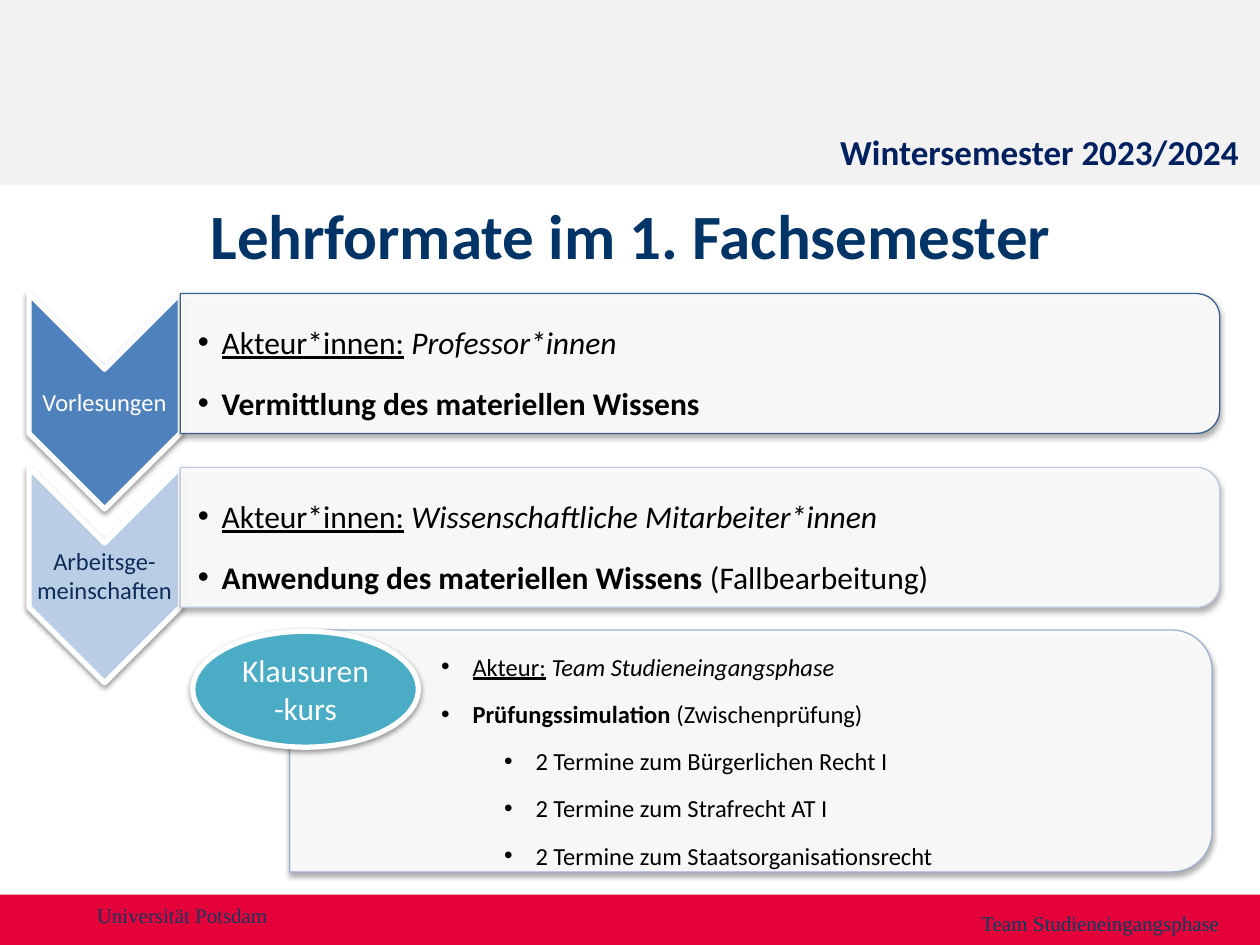
import pptx
import pptx.util
import pptx.dml.color
import pptx.enum.shapes
import pptx.enum.text
import pptx.oxml.ns
from lxml import etree

Inches, Pt = pptx.util.Inches, pptx.util.Pt
SHAPE = pptx.enum.shapes.MSO_SHAPE
ALIGN = pptx.enum.text.PP_ALIGN
ANCHOR = pptx.enum.text.MSO_ANCHOR
qn = pptx.oxml.ns.qn

COLORS = {
    "white": "FFFFFF", "black": "000000", "header": "F2F2F2", "footer": "E4013A",
    "title": "003366", "semester": "002060", "university": "17375E", "team": "014260",
    "lecture": "4F81BD", "lecture_edge": "3A5F8C",
    "group": "B9CDE5", "group_edge": "BECADF", "group_text": "0D2C5A",
    "exam": "4BACC6", "exam_edge": "9DB0D1",
}
SLIDE_W, SLIDE_H = 10, 7.5
ROW_TOP, ROW_STEP, ROW_H = 2.33, 1.38, 1.11
CHEVRON_LEFT, CHEVRON_W, CHEVRON_H = 0.23, 1.2, 1.71
PANEL_LEFT, PANEL_W = CHEVRON_LEFT + CHEVRON_W, 8.25

FORMATS = [
    {"label": "Vorlesungen", "fill": "lecture", "edge": "lecture_edge", "text": "white",
     "points": [
         (1, [("Akteur*innen:", "u"), (" Professor*innen", "i")]),
         (1, [("Vermittlung des materiellen Wissens", "b")]),
     ]},
    {"label": "Arbeitsge-meinschaften", "fill": "group", "edge": "group_edge", "text": "group_text",
     "points": [
         (1, [("Akteur*innen:", "u"), (" ", ""), ("Wissenschaftliche Mitarbeiter*innen", "i")]),
         (1, [("Anwendung des materiellen Wissens", "b"), (" (Fallbearbeitung)", "")]),
     ]},
]
EXAM_COURSE = "Klausuren-kurs"
EXAM_POINTS = [
    (3, [("Akteur:", "u"), (" ", ""), ("Team Studieneingangsphase", "i")]),
    (3, [("Prüfungssimulation ", "b"), ("(Zwischenprüfung)", "")]),
    (4, [("2 Termine zum Bürgerlichen Recht I", "")]),
    (4, [("2 Termine zum Strafrecht AT I", "")]),
    (4, [("2 Termine zum Staatsorganisationsrecht", "")]),
]
INDENTS = {1: (0.19, 0.19), 3: (1.25, 0.25), 4: (1.75, 0.25)}


def rgb(name):
    return pptx.dml.color.RGBColor.from_string(COLORS[name])


def add_shape(slide, kind, box, fill, edge=None, width=0.75, shadow=None, opacity=None, turned=False):
    left, top, w, h = box
    if turned:
        left, top, w, h = left + (w - h) / 2, top + (h - w) / 2, h, w
    shape = slide.shapes.add_shape(kind, *map(Inches, (left, top, w, h)))
    shape.rotation = 90 if turned else 0
    shape.fill.solid()
    shape.fill.fore_color.rgb = rgb(fill)
    if edge:
        shape.line.color.rgb = rgb(edge)
        shape.line.width = Pt(width)
    else:
        shape.line.fill.background()
    shape.shadow.inherit = False
    properties = shape._element.spPr
    if opacity:
        color = properties.find(qn("a:solidFill")).find(qn("a:srgbClr"))
        etree.SubElement(color, qn("a:alpha"), val=str(opacity * 1000))
    if shadow:
        strength, distance = shadow
        outer = etree.SubElement(properties.find(qn("a:effectLst")), qn("a:outerShdw"),
                                 blurRad=str(Pt(3.1)), dist=str(Pt(distance)),
                                 dir="5400000", rotWithShape="0")
        color = etree.SubElement(outer, qn("a:srgbClr"), val=COLORS["black"])
        etree.SubElement(color, qn("a:alpha"), val=str(strength * 1000))
    return shape


def add_panel(slide, box, edge):
    add_shape(slide, SHAPE.ROUND_2_SAME_RECTANGLE, box, "white", edge,
              shadow=(35, 1.8), opacity=90, turned=True)


def style(paragraph, size, color, face="Calibri", bold=None, align=None):
    paragraph.alignment = align
    font = paragraph.font
    font.size, font.name, font.bold = Pt(size), face, bold
    font.color.rgb = rgb(color)


def add_frame(slide, box, anchor=ANCHOR.TOP, insets=None, wrap=True):
    frame = slide.shapes.add_textbox(*map(Inches, box)).text_frame
    frame.word_wrap = wrap
    frame.vertical_anchor = anchor
    if insets:
        (frame.margin_left, frame.margin_top,
         frame.margin_right, frame.margin_bottom) = map(Inches, insets)
    return frame


def add_text(slide, box, text, size, color, face="Calibri", bold=None, align=None, **options):
    frame = add_frame(slide, box, **options)
    frame.text = text
    style(frame.paragraphs[0], size, color, face, bold, align)


def add_points(slide, box, points, size, inset):
    frame = add_frame(slide, box, ANCHOR.MIDDLE, (inset, 0.01, 0.01, 0.01))
    for number, (level, runs) in enumerate(points):
        paragraph = frame.paragraphs[0] if number == 0 else frame.add_paragraph()
        paragraph.level = level
        margin, hanging = INDENTS[level]
        properties = paragraph._p.get_or_add_pPr()
        properties.set("marL", str(Inches(margin)))
        properties.set("indent", str(-Inches(hanging)))
        etree.SubElement(properties, qn("a:buFont"), typeface="Arial")
        etree.SubElement(properties, qn("a:buChar"), char="•")
        paragraph.line_spacing = 1.5
        paragraph.space_after = Pt(round(size * 0.13, 1))
        style(paragraph, size, "black")
        for text, marks in runs:
            run = paragraph.add_run()
            run.text = text
            run.font.bold = "b" in marks
            run.font.italic = "i" in marks
            run.font.underline = "u" in marks


def main():
    deck = pptx.Presentation()
    deck.slide_width, deck.slide_height = Inches(SLIDE_W), Inches(SLIDE_H)
    slide = deck.slides.add_slide(deck.slide_layouts[6])

    add_shape(slide, SHAPE.RECTANGLE, (0, 0, SLIDE_W, 1.47), "header")
    add_shape(slide, SHAPE.RECTANGLE, (0, 7.1, SLIDE_W, 0.4), "footer")
    add_text(slide, (0.67, 7.06, 4.41, 0.4), "Universität Potsdam", 12, "university",
             "Times New Roman", anchor=ANCHOR.MIDDLE)
    add_text(slide, (0.2, 1.51, 9.61, 0.71), "Lehrformate im 1. Fachsemester", 36, "title",
             bold=True, align=ALIGN.CENTER)

    for row, item in enumerate(FORMATS):
        top = ROW_TOP + row * ROW_STEP
        add_shape(slide, SHAPE.CHEVRON, (CHEVRON_LEFT, top, CHEVRON_W, CHEVRON_H), item["fill"],
                  "white", 3, shadow=(38, 1.6), turned=True)
        add_text(slide, (CHEVRON_LEFT, top + CHEVRON_W / 2, CHEVRON_W, CHEVRON_H - CHEVRON_W),
                 item["label"], 14, item["text"], align=ALIGN.CENTER,
                 anchor=ANCHOR.MIDDLE, insets=(0.01,) * 4)
        add_panel(slide, (PANEL_LEFT, top, PANEL_W, ROW_H), item["edge"])
        add_points(slide, (PANEL_LEFT, top + 0.05, PANEL_W - 0.05, ROW_H - 0.11),
                   item["points"], 18, 0.14)

    add_panel(slide, (2.3, 5, 7.32, 1.92), "exam_edge")
    add_points(slide, (2.34, 5.01, 7.28, 1.94), EXAM_POINTS, 14, 0.16)
    exam = add_shape(slide, SHAPE.OVAL, (1.53, 5.01, 1.79, 0.92), "exam", "white", 3, shadow=(38, 1.6))
    exam.text_frame.text = EXAM_COURSE
    style(exam.text_frame.paragraphs[0], 18, "white", align=ALIGN.CENTER)

    add_text(slide, (7.69, 7.18, 2.12, 0.3), "Team Studieneingangsphase", 12, "team",
             "Times New Roman", wrap=False)
    add_text(slide, (6.57, 0.99, 3.43, 0.44), "Wintersemester 2023/2024", 20, "semester", bold=True)
    deck.save("out.pptx")


if __name__ == "__main__":
    main()
